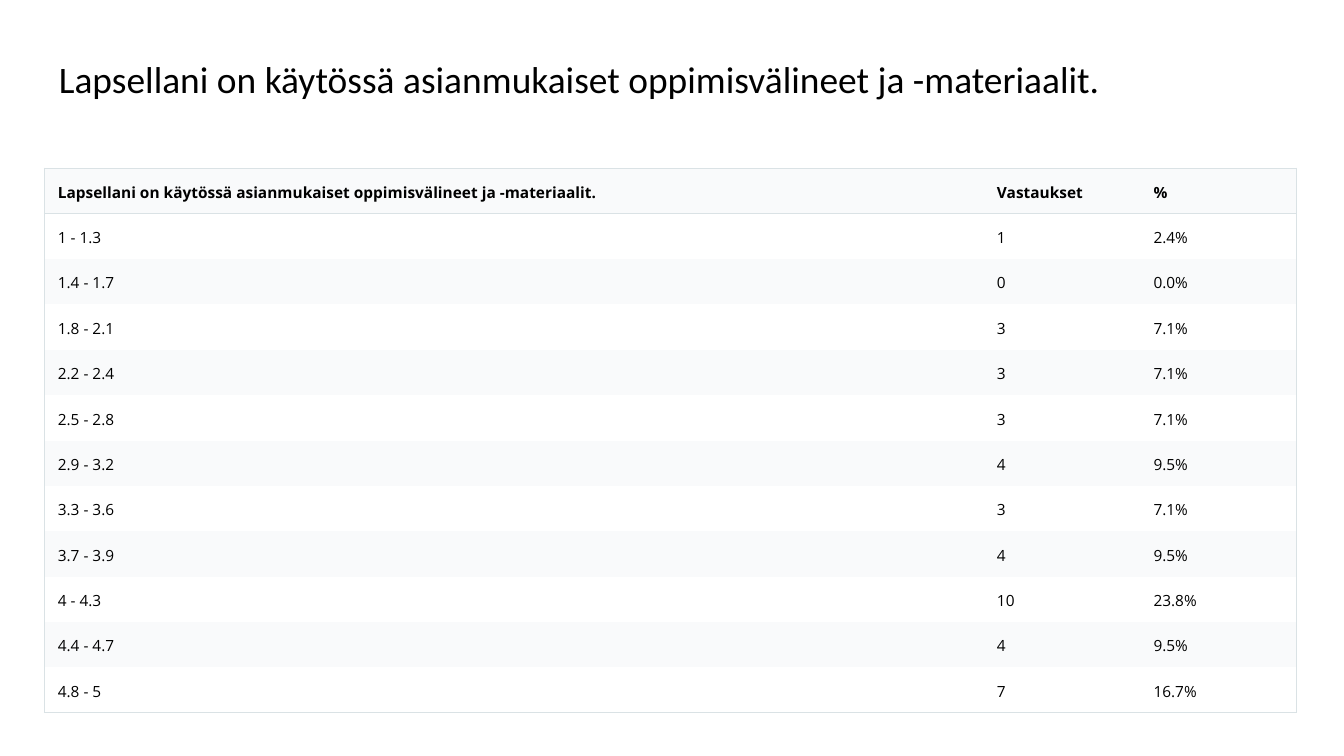
"""Build a survey slide with a title and a table of answer counts."""
from lxml.etree import SubElement
from pptx import Presentation
from pptx.dml.color import RGBColor
from pptx.enum.text import MSO_ANCHOR
from pptx.oxml.ns import qn
from pptx.util import Inches, Pt

QUESTION = "Lapsellani on käytössä asianmukaiset oppimisvälineet ja -materiaalit."
ROWS = [
    (QUESTION, "Vastaukset", "%"),
    ("1 - 1.3", "1", "2.4%"),
    ("1.4 - 1.7", "0", "0.0%"),
    ("1.8 - 2.1", "3", "7.1%"),
    ("2.2 - 2.4", "3", "7.1%"),
    ("2.5 - 2.8", "3", "7.1%"),
    ("2.9 - 3.2", "4", "9.5%"),
    ("3.3 - 3.6", "3", "7.1%"),
    ("3.7 - 3.9", "4", "9.5%"),
    ("4 - 4.3", "10", "23.8%"),
    ("4.4 - 4.7", "4", "9.5%"),
    ("4.8 - 5", "7", "16.7%"),
]
COLORS = {"text": "000000", "band": "F9FAFB", "plain": "FFFFFF", "border": "DAE2E5"}
COLUMN_SHARES = (0.75, 0.125, 0.125)
CONTENT_WIDTH = Inches(12.42)
ROW_HEIGHT = Inches(0.44)
INSET = Pt(9.6)


def style_text(para, font_name, size, bold=False):
    for span in para.runs:
        span.font.name = font_name
        span.font.size = Pt(size)
        span.font.bold = bold
        span.font.color.rgb = RGBColor.from_string(COLORS["text"])


def set_insets(target):
    target.margin_left = target.margin_right = INSET
    target.margin_top = target.margin_bottom = INSET


def set_borders(cell, visible):
    properties = cell._tc.get_or_add_tcPr()
    for side in "LRTB":
        line = SubElement(properties, qn(f"a:ln{side}"), w=str(Pt(1)))
        if side in visible:
            fill = SubElement(line, qn("a:solidFill"))
            SubElement(fill, qn("a:srgbClr"), val=COLORS["border"])
        else:
            SubElement(line, qn("a:noFill"))


def visible_sides(row, column):
    last_row, last_column = len(ROWS) - 1, len(COLUMN_SHARES) - 1
    rules = {
        "L": column == 0,
        "R": column == last_column,
        "T": row <= 1,
        "B": row in (0, last_row),
    }
    return [side for side, shown in rules.items() if shown]


def add_title(page):
    box = page.shapes.add_textbox(Inches(0.45), Inches(0.39), CONTENT_WIDTH, Inches(0.84))
    frame = box.text_frame
    frame.word_wrap = True
    frame.vertical_anchor = MSO_ANCHOR.MIDDLE
    set_insets(frame)
    frame.text = QUESTION
    frame.paragraphs[0].line_spacing = 0.9
    style_text(frame.paragraphs[0], "Calibri", 26.7)


def add_answers(page):
    table = page.shapes.add_table(
        len(ROWS), len(COLUMN_SHARES), Inches(0.44), Inches(1.67),
        CONTENT_WIDTH, ROW_HEIGHT * len(ROWS),
    ).table
    table.first_row = table.horz_banding = False
    for column, share in zip(table.columns, COLUMN_SHARES):
        column.width = int(CONTENT_WIDTH * share)
    for row, values in enumerate(ROWS):
        table.rows[row].height = ROW_HEIGHT
        for column, value in enumerate(values):
            cell = table.cell(row, column)
            cell.text = value
            set_insets(cell)
            set_borders(cell, visible_sides(row, column))
            cell.fill.solid()
            shade = "plain" if row % 2 else "band"
            cell.fill.fore_color.rgb = RGBColor.from_string(COLORS[shade])
            style_text(cell.text_frame.paragraphs[0], "Open Sans", 11, row == 0)


def main():
    deck = Presentation()
    deck.slide_width, deck.slide_height = Inches(13.33), Inches(7.5)
    page = deck.slides.add_slide(deck.slide_layouts[6])
    add_title(page)
    add_answers(page)
    deck.save("out.pptx")


if __name__ == "__main__":
    main()
